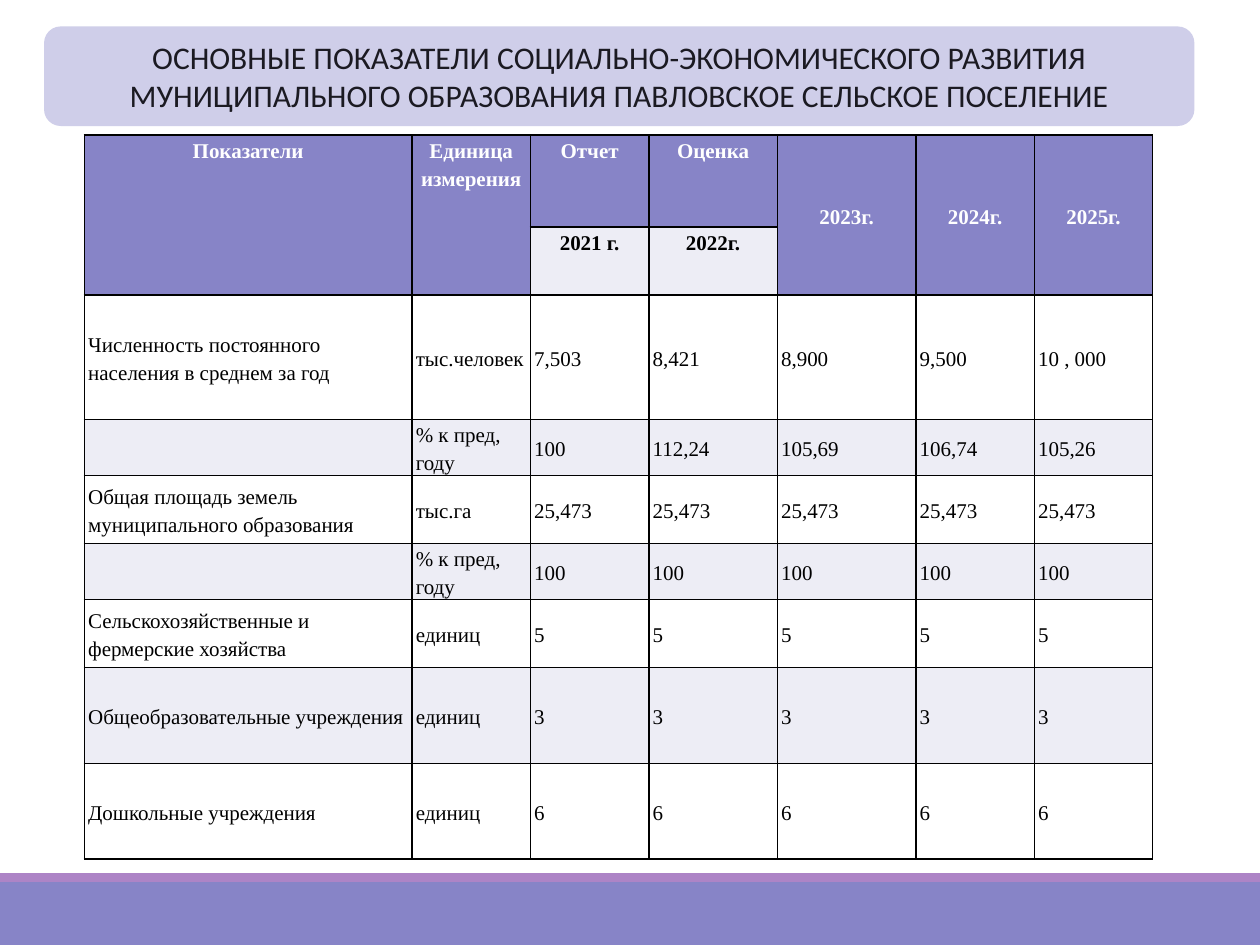
from dataclasses import dataclass

from lxml.etree import SubElement
from pptx import Presentation
from pptx.dml.color import RGBColor
from pptx.enum.shapes import MSO_SHAPE as Preset
from pptx.enum.text import MSO_ANCHOR as Anchor, MSO_AUTO_SIZE as AutoSize, PP_ALIGN as Align
from pptx.oxml.ns import qn
from pptx.util import Inches, Pt

# The page is a grid of 100 columns by 75 rows of square units.
PAGE_COLUMNS, PAGE_ROWS = 100, 75
UNIT = Inches(0.1)


@dataclass(frozen=True)
class Theme:
    violet: str = "8784C7"
    orchid: str = "AD84C6"
    lavender: str = "CFCEE9"
    pale: str = "EDEDF5"
    white: str = "FFFFFF"
    black: str = "000000"
    title_ink: str = "1B1A22"
    title_font: str = "Calibri"
    table_font: str = "Times New Roman"
    title_size: int = 18
    table_size: int = 12
    border_width: int = 1
    line_spacing: float = 1.2


@dataclass(frozen=True)
class Area:
    column: float
    row: float
    columns: float
    rows: float

    def lengths(self) -> list[int]:
        return [units(n) for n in (self.column, self.row, self.columns, self.rows)]


@dataclass(frozen=True)
class CellStyle:
    fill: str
    ink: str
    bold: bool = False
    align: Align = Align.LEFT
    anchor: Anchor = Anchor.MIDDLE


@dataclass(frozen=True)
class Indicator:
    name: str
    measure: str
    values: tuple[str, ...]


THEME = Theme()
TITLE_AREA = Area(3.5, 2.1, 91.3, 7.9)
COLUMN_WIDTHS = (26, 9.4, 9.4, 10.2, 11, 9.4, 9.4)
ROW_HEIGHTS = (7.3, 5.4, 9.9, 3.2, 5.4, 3.2, 5.4, 7.6, 7.6)
TABLE_AREA = Area(6.7, 10.7, sum(COLUMN_WIDTHS), sum(ROW_HEIGHTS))

TITLE = ("ОСНОВНЫЕ ПОКАЗАТЕЛИ СОЦИАЛЬНО-ЭКОНОМИЧЕСКОГО РАЗВИТИЯ "
         "МУНИЦИПАЛЬНОГО ОБРАЗОВАНИЯ ПАВЛОВСКОЕ СЕЛЬСКОЕ ПОСЕЛЕНИЕ")
HEADINGS = ("Показатели", "Единица измерения", "Отчет", "Оценка", "2023г.", "2024г.", "2025г.")
SUBHEADINGS = {2: "2021 г.", 3: "2022г."}
FIRST_FORECAST = 4
YEARS = 5
INDICATORS = (
    Indicator("Численность постоянного населения в среднем за год", "тыс.человек",
              ("7,503", "8,421", "8,900", "9,500", "10 , 000")),
    Indicator("", "% к пред, году", ("100", "112,24", "105,69", "106,74", "105,26")),
    Indicator("Общая площадь земель муниципального образования", "тыс.га", ("25,473",) * YEARS),
    Indicator("", "% к пред, году", ("100",) * YEARS),
    Indicator("Сельскохозяйственные и фермерские хозяйства", "единиц", ("5",) * YEARS),
    Indicator("Общеобразовательные учреждения", "единиц", ("3",) * YEARS),
    Indicator("Дошкольные учреждения", "единиц", ("6",) * YEARS),
)


def units(count: float) -> int:
    return round(count * UNIT)


def color(code: str) -> RGBColor:
    return RGBColor.from_string(code)


def add_panel(page, preset: Preset, area: Area, fill: str) -> None:
    panel = page.shapes.add_shape(preset, *area.lengths())
    panel.shadow.inherit = False
    panel.fill.solid()
    panel.fill.fore_color.rgb = color(fill)
    panel.line.fill.background()


def add_span(para, text: str, font: str, size: int, ink: str, bold: bool = False) -> None:
    span = para.add_run()
    span.text = text
    span.font.name = font
    span.font.size = Pt(size)
    span.font.bold = bold
    span.font.color.rgb = color(ink)


def write_title(page) -> None:
    """Lay the title placeholder over its rounded panel."""
    add_panel(page, Preset.ROUNDED_RECTANGLE, TITLE_AREA, THEME.lavender)
    title = page.shapes.title
    title.left, title.top, title.width, title.height = TITLE_AREA.lengths()
    page.shapes._spTree.append(title._element)
    frame = title.text_frame
    frame.word_wrap = True
    frame.auto_size = AutoSize.NONE
    frame.vertical_anchor = Anchor.MIDDLE
    para = frame.paragraphs[0]
    para.alignment = Align.CENTER
    add_span(para, TITLE, THEME.title_font, THEME.title_size, THEME.title_ink)


def add_borders(cell) -> None:
    properties = cell._tc.get_or_add_tcPr()
    for side in ("a:lnL", "a:lnR", "a:lnT", "a:lnB"):
        line = SubElement(properties, qn(side), w=str(Pt(THEME.border_width)))
        paint = SubElement(line, qn("a:solidFill"))
        SubElement(paint, qn("a:srgbClr"), val=THEME.black)


def write_cell(cell, text: str, style: CellStyle) -> None:
    add_borders(cell)
    cell.fill.solid()
    cell.fill.fore_color.rgb = color(style.fill)
    cell.margin_left = cell.margin_right = Inches(0.03)
    cell.margin_top = cell.margin_bottom = 0
    cell.vertical_anchor = style.anchor
    para = cell.text_frame.paragraphs[0]
    para.alignment = style.align
    para.line_spacing = THEME.line_spacing
    para.font.size = Pt(THEME.table_size)
    if text:
        add_span(para, text, THEME.table_font, THEME.table_size, style.ink, style.bold)


def write_headings(table) -> None:
    for column, heading in enumerate(HEADINGS):
        anchor = Anchor.MIDDLE if column >= FIRST_FORECAST else Anchor.TOP
        top_style = CellStyle(THEME.violet, THEME.white, True, Align.CENTER, anchor)
        top, below = table.cell(0, column), table.cell(1, column)
        write_cell(top, heading, top_style)
        if column in SUBHEADINGS:
            year_style = CellStyle(THEME.pale, THEME.black, True, Align.CENTER, Anchor.TOP)
            write_cell(below, SUBHEADINGS[column], year_style)
        else:
            write_cell(below, "", top_style)
            top.merge(below)


def add_indicator_table(page) -> None:
    frame = page.shapes.add_table(len(ROW_HEIGHTS), len(COLUMN_WIDTHS), *TABLE_AREA.lengths())
    table = frame.table
    table.first_row = table.horz_banding = False
    for column, width in zip(table.columns, COLUMN_WIDTHS):
        column.width = units(width)
    for row, height in zip(table.rows, ROW_HEIGHTS):
        row.height = units(height)
    write_headings(table)
    for index, indicator in enumerate(INDICATORS):
        style = CellStyle(THEME.pale if index % 2 else THEME.white, THEME.black)
        texts = (indicator.name, indicator.measure, *indicator.values)
        for column, text in enumerate(texts):
            write_cell(table.cell(index + 2, column), text, style)


def main() -> None:
    deck = Presentation()
    deck.slide_width, deck.slide_height = units(PAGE_COLUMNS), units(PAGE_ROWS)
    page = deck.slides.add_slide(deck.slide_layouts.get_by_name("Title Only"))
    add_panel(page, Preset.RECTANGLE, Area(0, 70, PAGE_COLUMNS, 5), THEME.violet)
    add_panel(page, Preset.RECTANGLE, Area(0, 69.3, PAGE_COLUMNS, 0.7), THEME.orchid)
    write_title(page)
    add_indicator_table(page)
    deck.save("out.pptx")


if __name__ == "__main__":
    main()
